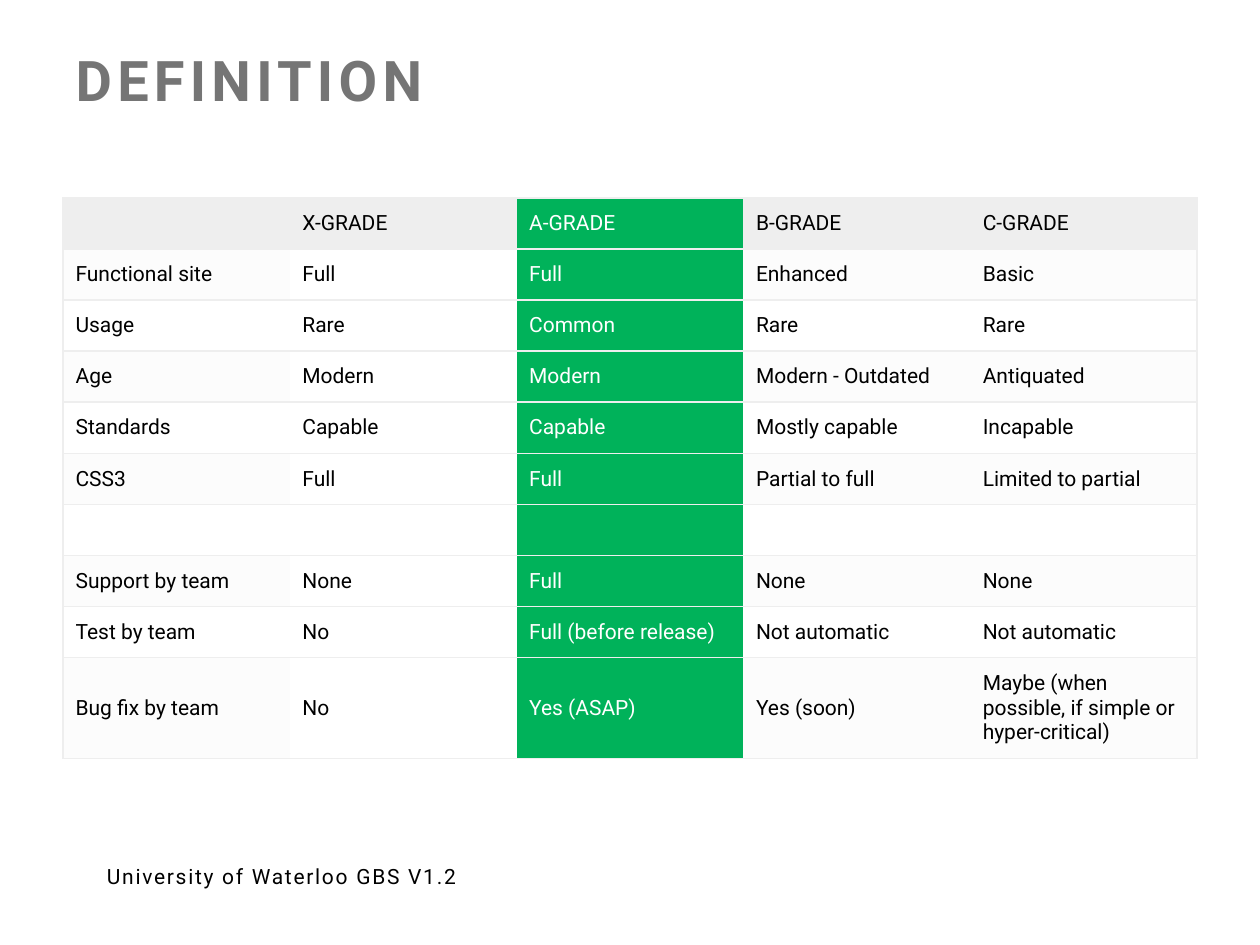
import pptx
import pptx.dml.color
import pptx.enum.text
import pptx.util
from lxml import etree
from pptx.oxml.ns import qn

Inches = pptx.util.Inches
ANCHOR = pptx.enum.text.MSO_ANCHOR
FONT = "Roboto"
COLORS = {
    "title": "757575", "text": "000000", "white": "FFFFFF",
    "highlight": "00B25A", "header": "EEEEEE", "band": "FCFCFC", "border": "EEEEEE",
}
HIGHLIGHT_COL = 2
ROWS = [
    ["", "X-GRADE", "A-GRADE", "B-GRADE", "C-GRADE"],
    ["Functional site", "Full", "Full", "Enhanced", "Basic"],
    ["Usage", "Rare", "Common", "Rare", "Rare"],
    ["Age", "Modern", "Modern", "Modern - Outdated", "Antiquated"],
    ["Standards", "Capable", "Capable", "Mostly capable", "Incapable"],
    ["CSS3", "Full", "Full", "Partial to full", "Limited to partial"],
    [""] * 5,
    ["Support by team", "None", "Full", "None", "None"],
    ["Test by team", "No", "Full (before release)", "Not automatic", "Not automatic"],
    ["Bug fix by team", "No", "Yes (ASAP)", "Yes (soon)",
     "Maybe (when possible, if simple or hyper-critical)"],
]


def rgb(name):
    return pptx.dml.color.RGBColor.from_string(COLORS[name])


def style_font(font, size, color, bold=False):
    font.name = FONT
    font.size = pptx.util.Pt(size)
    font.bold = bold
    font.color.rgb = rgb(color)


def space_letters(p, points):
    for r in p.runs:
        r._r.get_or_add_rPr().set("spc", str(points * 100))


def add_title(slide, text):
    sp = slide.shapes.title
    sp.left, sp.top, sp.width, sp.height = map(Inches, (0.5, 0.31, 9, 1.25))
    tf = sp.text_frame
    tf.text = text
    tf.vertical_anchor = ANCHOR.TOP
    tf.margin_top = Inches(0.05)
    p = tf.paragraphs[0]
    p.alignment = pptx.enum.text.PP_ALIGN.LEFT
    style_font(p.font, 32, "title", bold=True)
    space_letters(p, 3)


def add_footer(slide, text):
    sp = slide.shapes.add_textbox(*map(Inches, (0.75, 6.75, 6.01, 0.4)))
    tf = sp.text_frame
    tf.word_wrap = True
    tf.vertical_anchor = ANCHOR.MIDDLE
    tf.text = text
    p = tf.paragraphs[0]
    style_font(p.font, 12, "text")
    space_letters(p, 1)


def set_borders(cell, visible):
    """Draw the visible sides (from L, R, T, B) and clear the others."""
    tcPr = cell._tc.get_or_add_tcPr()
    for side in "LRTB":
        ln = etree.SubElement(tcPr, qn(f"a:ln{side}"), w=str(pptx.util.Pt(1)))
        if side in visible:
            fill = etree.SubElement(ln, qn("a:solidFill"))
            etree.SubElement(fill, qn("a:srgbClr"), val=COLORS["border"])
        else:
            etree.SubElement(ln, qn("a:noFill"))


def cell_fill(row, col):
    if col == HIGHLIGHT_COL:
        return "highlight"
    if row == 0:
        return "header"
    return "band" if row % 2 and col != 1 else "white"


def fill_cell(cell, row, col, text):
    last_col = len(ROWS[0]) - 1
    set_borders(cell, "TB" + {0: "L", last_col: "R"}.get(col, ""))
    cell.fill.solid()
    cell.fill.fore_color.rgb = rgb(cell_fill(row, col))
    p = cell.text_frame.paragraphs[0]
    if not text:
        etree.SubElement(p._p, qn("a:endParaRPr"), sz="1200")
        return
    cell.vertical_anchor = ANCHOR.MIDDLE
    cell.margin_left = cell.margin_right = Inches(0.1)
    cell.margin_top = cell.margin_bottom = Inches(0.1)
    # Table styles override paragraph fonts, so cells are styled on the run.
    r = p.add_run()
    r.text = text
    style_font(r.font, 12, "white" if col == HIGHLIGHT_COL else "text")


def add_grade_table(slide):
    frame = slide.shapes.add_table(
        len(ROWS), len(ROWS[0]), *map(Inches, (0.5, 1.57, 9, 4.45)))
    table = frame.table
    single_height = Inches(3.65 / (len(ROWS) - 1))
    for i, texts in enumerate(ROWS):
        table.rows[i].height = single_height
        for j, text in enumerate(texts):
            fill_cell(table.cell(i, j), i, j, text)
    table.rows[len(ROWS) - 1].height = Inches(0.79)


def main():
    prs = pptx.Presentation()
    prs.slide_width, prs.slide_height = Inches(10), Inches(7.5)
    slide = prs.slides.add_slide(prs.slide_layouts[5])
    add_title(slide, "DEFINITION")
    add_footer(slide, "University of Waterloo GBS V1.2")
    add_grade_table(slide)
    prs.save("out.pptx")


if __name__ == "__main__":
    main()
